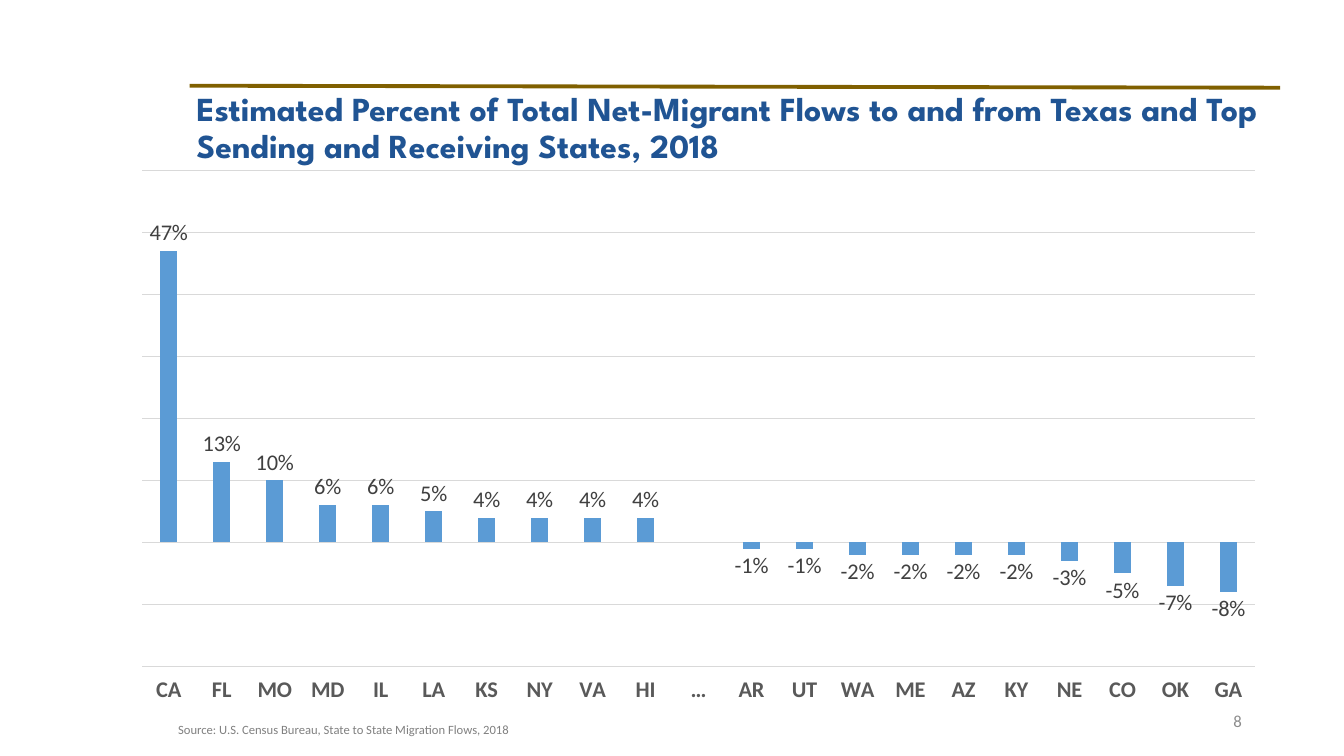
from lxml.etree import SubElement
from pptx import Presentation
from pptx.chart.data import CategoryChartData
from pptx.dml.color import RGBColor
from pptx.enum.chart import XL_CHART_TYPE as ChartType
from pptx.enum.chart import XL_LABEL_POSITION as LabelPosition
from pptx.enum.chart import XL_TICK_LABEL_POSITION as TickLabels
from pptx.enum.chart import XL_TICK_MARK as TickMark
from pptx.enum.shapes import MSO_CONNECTOR as Connector
from pptx.enum.text import MSO_ANCHOR as Anchor
from pptx.enum.text import MSO_AUTO_SIZE as AutoSize
from pptx.enum.text import PP_ALIGN as Align
from pptx.oxml import parse_xml
from pptx.oxml.ns import nsdecls, qn
from pptx.util import Cm, Pt

COLORS = {
    "rule": "806000", "title": "205493", "bar": "5B9BD5", "grid": "D9D9D9",
    "state": "595959", "label": "404040", "source": "808080",
    "number": "8C8C8C", "text": "000000",
}
FLOWS = {
    "CA": 0.47, "FL": 0.13, "MO": 0.10, "MD": 0.06, "IL": 0.06, "LA": 0.05,
    "KS": 0.04, "NY": 0.04, "VA": 0.04, "HI": 0.04, "…": None,
    "AR": -0.01, "UT": -0.01, "WA": -0.02, "ME": -0.02, "AZ": -0.02,
    "KY": -0.02, "NE": -0.03, "CO": -0.05, "OK": -0.07, "GA": -0.08,
}
PLOT_AREA = {"x": 0.02, "y": 0.02, "w": 0.96, "h": 0.89}


def style_font(font, size, color, name="Calibri", bold=False):
    font.name = name
    font.size = Pt(size)
    font.bold = bold
    font.color.rgb = RGBColor.from_string(COLORS[color])


def place_text(box, bounds, text, anchor, align, **style):
    box.left, box.top, box.width, box.height = [Cm(length) for length in bounds]
    frame = box.text_frame
    frame.word_wrap = True
    frame.auto_size = AutoSize.NONE
    frame.vertical_anchor = anchor
    para = frame.paragraphs[0]
    para.alignment = align
    span = para.add_run()
    span.text = text
    style_font(span.font, **style)
    return para


deck = Presentation()
deck.slide_width = Cm(33.87)
deck.slide_height = Cm(19.05)
page = deck.slides.add_slide(deck.slide_layouts[5])

rule = page.shapes.add_connector(
    Connector.STRAIGHT, Cm(4.78), Cm(2.16), Cm(32.26), Cm(2.21))
rule.line.color.rgb = RGBColor.from_string(COLORS["rule"])
rule.line.width = Pt(2.75)
SubElement(rule.element.spPr, qn("a:effectLst"))

source = page.shapes.add_textbox(0, 0, 0, 0)
place_text(source, (4.24, 18.06, 16.51, 0.64),
           "Source: U.S. Census Bureau, State to State Migration Flows, 2018",
           Anchor.TOP, Align.LEFT, size=9, color="source")

data = CategoryChartData(number_format="0%")
data.categories = list(FLOWS)
data.add_series("Series 1", list(FLOWS.values()))
chart = page.shapes.add_chart(
    ChartType.COLUMN_CLUSTERED, Cm(3), Cm(4.01), Cm(29.21), Cm(14.05), data).chart
chart.has_title = False
chart.has_legend = False
style_font(chart.font, 16, "text")

states = chart.category_axis
states.tick_label_position = TickLabels.LOW
states.major_tick_mark = TickMark.NONE
states.minor_tick_mark = TickMark.NONE
style_font(states.tick_labels.font, 16, "state", bold=True)

percents = chart.value_axis
percents.visible = False
percents.minimum_scale = -0.2
percents.maximum_scale = 0.6
percents.major_unit = 0.1
percents.has_major_gridlines = True
percents.tick_labels.number_format = "0.00%"
percents.tick_labels.number_format_is_linked = False
for line in (states.format.line, percents.major_gridlines.format.line):
    line.color.rgb = RGBColor.from_string(COLORS["grid"])
    line.width = Pt(0.75)

plot = chart.plots[0]
plot.gap_width = 219
plot.overlap = -27
plot.vary_by_categories = False
bars = plot.series[0]
bars.invert_if_negative = False
bars.format.fill.solid()
bars.format.fill.fore_color.rgb = RGBColor.from_string(COLORS["bar"])
labels = bars.data_labels
labels.show_value = True
labels.position = LabelPosition.OUTSIDE_END
labels.number_format = "0%"
labels.number_format_is_linked = False
style_font(labels.font, 16, "label")

plot_area = chart.element.chart.plotArea
for layout in plot_area.findall(qn("c:layout")):
    plot_area.remove(layout)
sizes = "".join(f'<c:{key} val="{share}"/>' for key, share in PLOT_AREA.items())
plot_area.insert(0, parse_xml(
    f'<c:layout {nsdecls("c")}><c:manualLayout><c:layoutTarget val="inner"/>'
    f'<c:xMode val="edge"/><c:yMode val="edge"/>{sizes}</c:manualLayout></c:layout>'))

title = place_text(
    page.shapes.title, (4.7, 2.21, 27.48, 15.24),
    "Estimated Percent of Total Net-Migrant Flows to and from Texas and Top "
    "Sending and Receiving States, 2018",
    Anchor.TOP, Align.LEFT, size=24, color="title", name="League Spartan", bold=True)
title.line_spacing = 0.9
title.space_before = Pt(0)

number = page.shapes.add_textbox(0, 0, 0, 0)
place_text(number, (23.93, 17.65, 7.62, 1.02), "8",
           Anchor.MIDDLE, Align.RIGHT, size=12, color="number")

deck.save("out.pptx")
